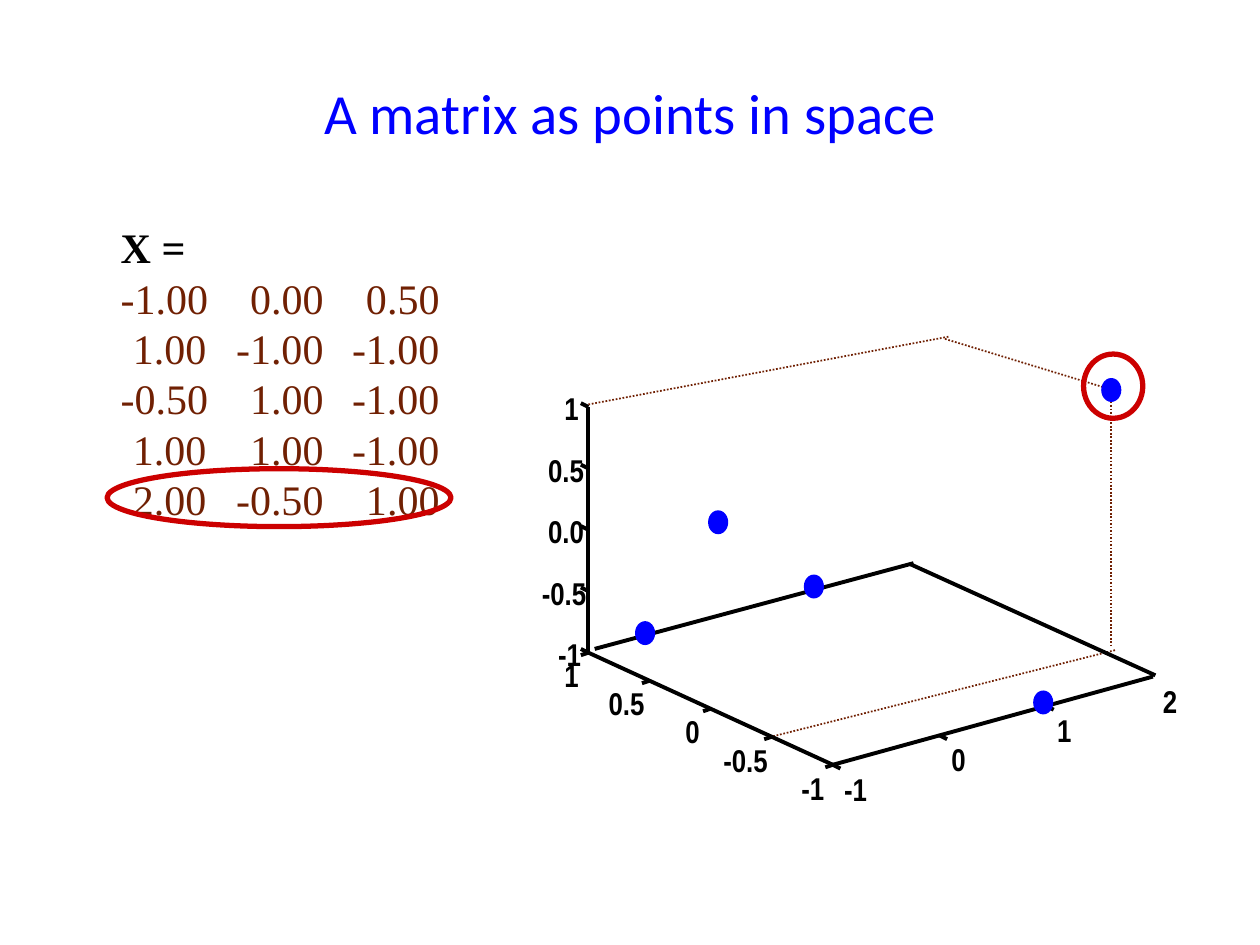
from lxml import etree
from pptx import Presentation
from pptx.dml.color import RGBColor
from pptx.enum.dml import MSO_LINE
from pptx.enum.shapes import MSO_CONNECTOR, MSO_SHAPE
from pptx.enum.text import MSO_ANCHOR, MSO_AUTO_SIZE, PP_ALIGN
from pptx.oxml.ns import qn
from pptx.util import Pt

OVAL, LINE = MSO_SHAPE.OVAL, MSO_CONNECTOR.STRAIGHT
DOTTED = MSO_LINE.ROUND_DOT
PX = 9144  # 100 px to the inch
HUES = {"blue": "0000FF", "brown": "702003", "red": "CC0000", "black": "000000"}

# Content
TITLE = "A matrix as points in space"
HEAD = "X ="
MATRIX = [
    (-1, 0, 0.5),
    (1, -1, -1),
    (-0.5, 1, -1),
    (1, 1, -1),
    (2, -0.5, 1),
]
TABS = (68, 161, 253)  # right edges of the matrix columns

GUIDES = [
    (611, 585, 885, 516),
    (467, 321, 754, 267),
    (750, 269, 878, 308),
    (882, 305, 882, 513),
]
RINGS = [(85, 372, 273, 46), (860, 281, 47, 51)]
EDGES = [(472, 515, 725, 447), (917, 536, 723, 448)]
DOTS = [(504, 493), (874, 300), (820, 548), (638, 456), (562, 405)]
DOT_W, DOT_H = 16, 19

# Each axis: ends, tick vector, ticks drawn, label drop, labels with left edges
AXES = [
    dict(ends=(661, 607, 915, 537), tick=(6, 3), count=3, drop=4,
         marks=[("-1", 670), ("0", 755), ("1", 839), ("2", 923)]),
    dict(ends=(661, 607, 467, 518), tick=(-6, 2), count=5, drop=3,
         marks=[("-1", 636), ("-0.5", 574), ("0", 544), ("0.5", 483), ("1", 448)]),
    dict(ends=(467, 518, 467, 323), tick=(-6, -3), count=5, drop=-14,
         marks=[("-1", 443), ("-0.5", 430), ("0.0", 435), ("0.5", 435), ("1", 448)]),
]
WIDTHS = {1: 12, 2: 20, 3: 30, 4: 38}  # label width by letter count


def px(*vals):
    return [round(v * PX) for v in vals]


def hue(name):
    return RGBColor.from_string(HUES[name])


def style(run, face, size, name, bold=False):
    run.font.name, run.font.size, run.font.bold = face, Pt(size), bold
    run.font.color.rgb = hue(name)


def draw_line(slide, ends, name="black", width=2.25, dash=None):
    line = slide.shapes.add_connector(LINE, *px(*ends))
    line.line.color.rgb = hue(name)
    line.line.width = Pt(width)
    if dash:
        line.line.dash_style = dash
    etree.SubElement(line._element.spPr, qn("a:effectLst"))


def draw_oval(slide, box, fill=None, edge=None):
    oval = slide.shapes.add_shape(OVAL, *px(*box))
    oval.shadow.inherit = False
    if fill:
        oval.fill.solid()
        oval.fill.fore_color.rgb = hue(fill)
    else:
        oval.fill.background()
    if edge:
        oval.line.color.rgb = hue(edge)
        oval.line.width = Pt(3)
    else:
        oval.line.fill.background()


def draw_label(slide, text, left, top):
    box = slide.shapes.add_textbox(*px(left, top, WIDTHS[len(text)], 30))
    frame = box.text_frame
    frame.margin_left = frame.margin_right = 0
    frame.margin_top = frame.margin_bottom = 0
    frame.word_wrap = False
    frame.auto_size = MSO_AUTO_SIZE.SHAPE_TO_FIT_TEXT
    frame.text = text
    style(frame.paragraphs[0].runs[0], "Arial Narrow", 18, "black", True)


def draw_axis(slide, ends, tick, count, drop, marks):
    x1, y1, x2, y2 = ends
    draw_line(slide, ends)
    for i, (text, left) in enumerate(marks):
        part = i / (len(marks) - 1)
        x, y = x1 + (x2 - x1) * part, y1 + (y2 - y1) * part
        if i < count:
            draw_line(slide, (x, y, x + tick[0], y + tick[1]))
        draw_label(slide, text, left, y + drop)


def draw_matrix(slide):
    frame = slide.shapes.add_textbox(*px(86, 171, 275, 250)).text_frame
    frame.word_wrap = True
    rows = ["".join(f"\t{v:.2f}" for v in row) for row in MATRIX]
    frame.text = "\n".join([HEAD] + rows)
    for i, para in enumerate(frame.paragraphs):
        for run in para.runs:
            style(run, "Times New Roman", 24, "brown" if i else "black", not i)
        if i:
            stops = etree.SubElement(para._p.get_or_add_pPr(), qn("a:tabLst"))
            for pos in px(*TABS):
                etree.SubElement(stops, qn("a:tab"), pos=str(pos), algn="r")


def main():
    deck = Presentation()
    deck.slide_width, deck.slide_height = px(1000, 750)
    slide = deck.slides.add_slide(deck.slide_layouts[5])

    # Title
    title = slide.shapes.title
    title.left, title.top, title.width, title.height = px(75, 55, 850, 68)
    title.text_frame.text = TITLE
    title.text_frame.vertical_anchor = MSO_ANCHOR.MIDDLE
    para = title.text_frame.paragraphs[0]
    para.alignment = PP_ALIGN.CENTER
    style(para.runs[0], "Calibri", 32.4, "blue")

    # Matrix, guides and rings
    draw_matrix(slide)
    for ends in GUIDES:
        draw_line(slide, ends, "brown", 1, DOTTED)
    for box in RINGS:
        draw_oval(slide, box, edge="red")

    # Axes and points
    for axis in AXES:
        draw_axis(slide, **axis)
    for ends in EDGES:
        draw_line(slide, ends)
    for left, top in DOTS:
        draw_oval(slide, (left, top, DOT_W, DOT_H), fill="blue")

    deck.save("out.pptx")


if __name__ == "__main__":
    main()
